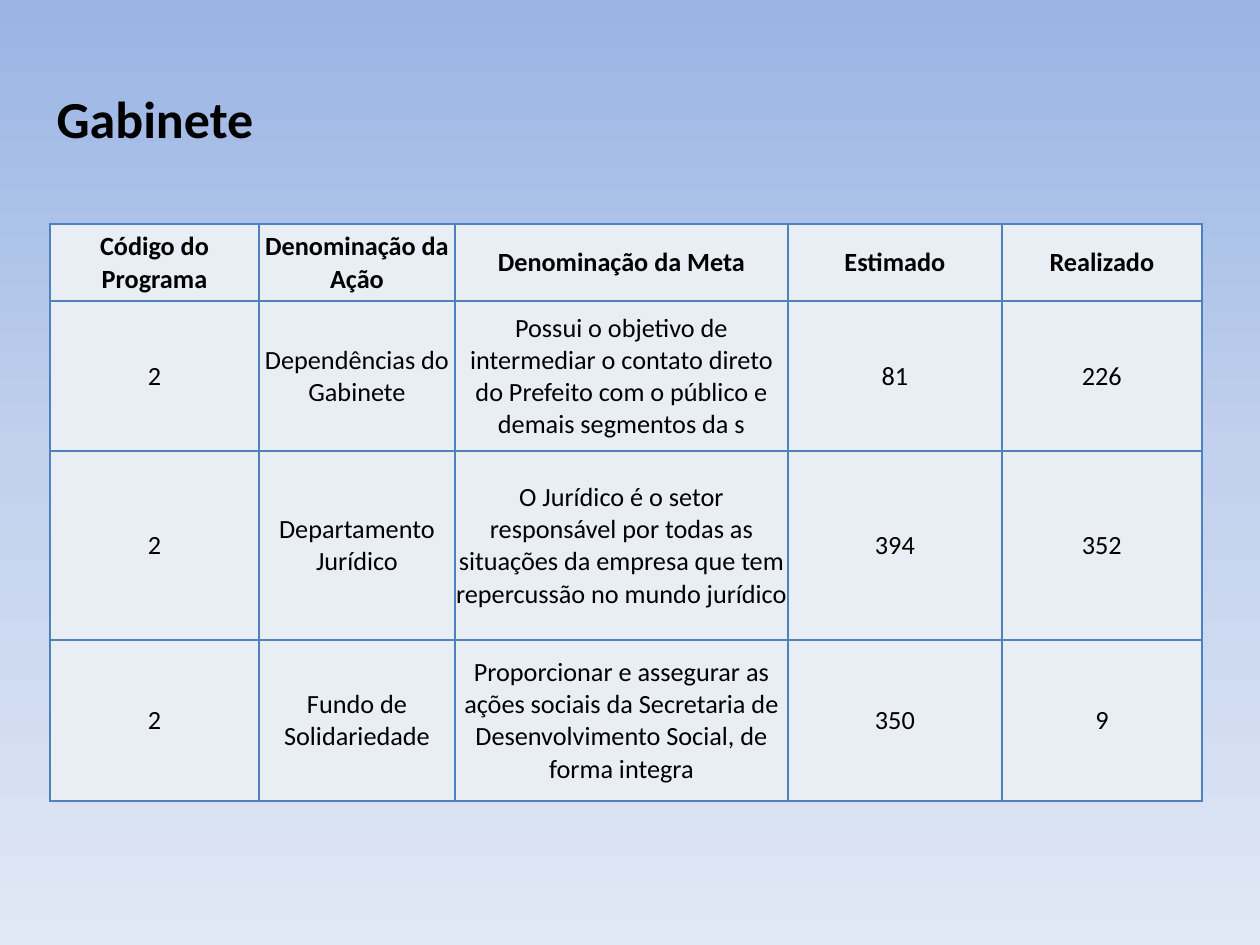
from copy import deepcopy
from pptx import Presentation
from pptx.dml.color import RGBColor
from pptx.enum.text import MSO_ANCHOR, PP_ALIGN
from pptx.oxml import parse_xml
from pptx.oxml.ns import nsdecls, qn
from pptx.util import Pt

MIDDLE = MSO_ANCHOR.MIDDLE
LEFT, CENTER = PP_ALIGN.LEFT, PP_ALIGN.CENTER
FONT, BLACK, PALE, BLUE = "Calibri", "000000", "E9EDF4", "4F81BD"
STOPS = [(0, "9AB5E4"), (0.5, "C2D1ED"), (1, "E1E8F5")]
COLS = [209, 196, 333, 214, 200]
HEIGHTS = [77, 150, 189, 161]
ROWS = [
    ["Código do Programa", "Denominação da Ação", "Denominação da Meta", "Estimado", "Realizado"],
    ["2", "Dependências do Gabinete",
     "Possui o objetivo de intermediar o contato direto do Prefeito com o público "
     "e demais segmentos da s", "81", "226"],
    ["2", "Departamento Jurídico",
     "O Jurídico é o setor responsável por todas as situações da empresa que tem "
     "repercussão no mundo jurídico", "394", "352"],
    ["2", "Fundo de Solidariedade",
     "Proporcionar e assegurar as ações sociais da Secretaria de Desenvolvimento "
     "Social, de forma integra", "350", "9"],
]


def px(n):
    """Turn pixels into EMU."""
    return round(n * 914400 / 126)


def rgb(code):
    """Turn a hex string into a colour."""
    return RGBColor.from_string(code)


def style(para, size, bold, align):
    """Format a paragraph and its runs."""
    para.alignment = align
    for run in para.runs:
        font = run.font
        font.name, font.size, font.bold = FONT, Pt(size), bold
        font.color.rgb = rgb(BLACK)


def paint_back(slide):
    """Fill the background with the vertical gradient."""
    fill = slide.background.fill
    fill.gradient()
    fill.gradient_angle = 270
    stops = next(slide.element.iter(qn("a:gsLst")))
    stops.insert(1, deepcopy(stops[0]))
    for stop, (pos, code) in zip(fill.gradient_stops, STOPS):
        stop.position = pos
        stop.color.rgb = rgb(code)


def set_title(slide, text):
    """Place and format the slide title."""
    title = slide.shapes.title
    title.left, title.top, title.width, title.height = map(px, (44, 16, 1071, 159))
    frame = title.text_frame
    frame.text = text
    frame.vertical_anchor = MIDDLE
    frame.margin_top, frame.margin_bottom = px(50), px(6)
    style(frame.paragraphs[0], 29.7, True, LEFT)


def add_edges(cell):
    """Draw the four cell borders."""
    props = cell._tc.get_or_add_tcPr()
    for i, side in enumerate(("lnL", "lnR", "lnT", "lnB")):
        props.insert(i, parse_xml(
            f'<a:{side} {nsdecls("a")} w="{Pt(1)}"><a:solidFill>'
            f'<a:srgbClr val="{BLUE}"/></a:solidFill></a:{side}>'))


def set_cell(cell, text, bold):
    """Write and format one table cell."""
    cell.text = text
    cell.vertical_anchor = MIDDLE
    cell.margin_left = cell.margin_right = cell.margin_top = px(1)
    cell.margin_bottom = 0
    cell.fill.solid()
    cell.fill.fore_color.rgb = rgb(PALE)
    style(cell.text_frame.paragraphs[0], 15, bold, CENTER)
    add_edges(cell)


def add_grid(slide):
    """Add the table of goals."""
    table = slide.shapes.add_table(
        len(ROWS), len(COLS), px(50), px(224), px(sum(COLS)), px(sum(HEIGHTS))).table
    for col, width in zip(table.columns, COLS):
        col.width = px(width)
    for r, (row, height) in enumerate(zip(table.rows, HEIGHTS)):
        row.height = px(height)
        for cell, text in zip(row.cells, ROWS[r]):
            set_cell(cell, text, r == 0)


def main():
    """Build and save the slide."""
    deck = Presentation()
    deck.slide_width, deck.slide_height = px(1260), px(945)
    slide = deck.slides.add_slide(deck.slide_layouts[5])
    paint_back(slide)
    set_title(slide, "Gabinete")
    add_grid(slide)
    deck.save("out.pptx")


if __name__ == "__main__":
    main()
